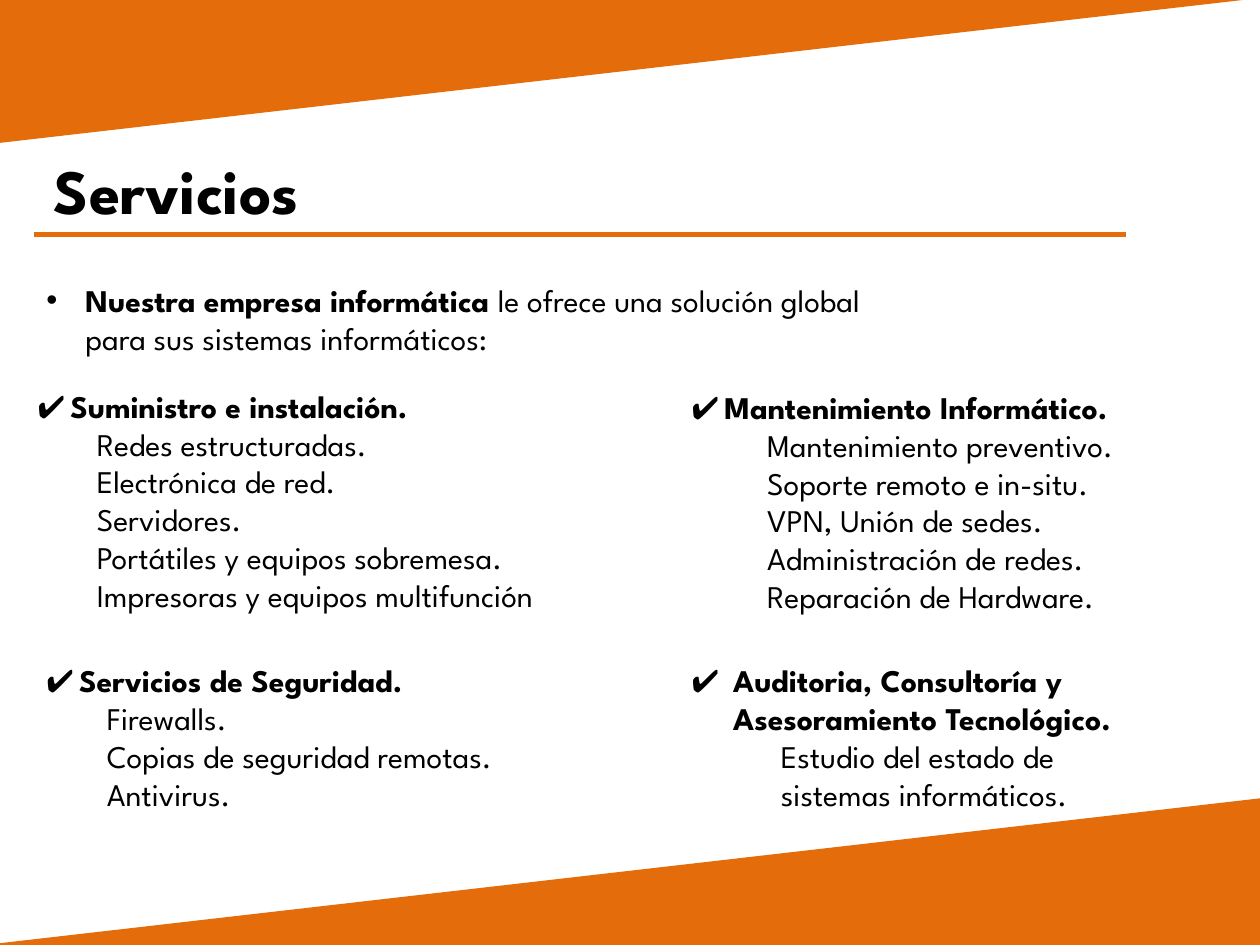
from dataclasses import dataclass

from lxml import etree
from pptx import Presentation
from pptx import util as u
from pptx.dml.color import RGBColor
from pptx.enum import shapes, text
from pptx.oxml.ns import qn

SLIDE_WIDTH, SLIDE_HEIGHT = u.Inches(10), u.Inches(7.5)
COLUMN, ROW = SLIDE_WIDTH / 100, SLIDE_HEIGHT / 100
ORANGE, BLACK = "E46C0A", "000000"
FONT = "League Spartan"
BAND_HEIGHT = 15.33


@dataclass
class Line:
    """Runs are (words, bold); indent and hang are in columns."""
    runs: list[tuple[str, bool]]
    indent: float = 0
    hang: float = 0
    bullet: str = ""
    size: float = 18


@dataclass
class Service:
    left: float
    top: float
    width: float
    height: float
    heading: list[str]
    items: list[str]
    item_indent: float
    heading_indent: float = 2.6

    def lines(self) -> list[Line]:
        first, *rest = self.heading
        return [
            Line([("✔\t", False), (first, True)], self.heading_indent, self.heading_indent),
            *(Line([(words, True)], self.heading_indent) for words in rest),
            *(Line([(words, False)], self.item_indent) for words in self.items),
        ]


SERVICES = [
    Service(2, 40.27, 67.7, 33.6, ["Suministro e instalación."],
            ["Redes estructuradas.", "Electrónica de red.", "Servidores.",
             "Portátiles y equipos sobremesa.", "Impresoras y equipos multifunción"], 4.7),
    Service(53.9, 40.4, 67.7, 25.6, ["Mantenimiento Informático."],
            ["Mantenimiento preventivo.", "Soporte remoto e in-situ.", "VPN, Unión de sedes.",
             "Administración de redes.", "Reparación de Hardware."], 6),
    Service(2.7, 69.33, 50, 21.6, ["Servicios de Seguridad."],
            ["Firewalls.", "Copias de seguridad remotas.", "Antivirus."], 4.8),
    Service(53.9, 69.33, 58, 17.47, ["Auditoria, Consultoría y", "Asesoramiento Tecnológico."],
            ["Estudio del estado de", "sistemas informáticos."], 7.1, 3.3),
]


def color(value: str) -> RGBColor:
    return RGBColor.from_string(value)


def place(left: float, top: float, width: float, height: float) -> list[int]:
    return [round(left * COLUMN), round(top * ROW), round(width * COLUMN), round(height * ROW)]


def set_format(target, values: dict) -> None:
    for name, value in values.items():
        setattr(target, name, value)


def add_text(slide, box: tuple, lines: list[Line]) -> None:
    frame = slide.shapes.add_textbox(*place(*box)).text_frame
    set_format(frame, {"word_wrap": True, "auto_size": text.MSO_AUTO_SIZE.NONE})
    for index, line in enumerate(lines):
        paragraph = frame.paragraphs[0] if index == 0 else frame.add_paragraph()
        properties = paragraph._p.get_or_add_pPr()
        properties.set("marL", str(round(line.indent * COLUMN)))
        properties.set("indent", str(round(-line.hang * COLUMN)))
        if line.bullet:
            etree.SubElement(properties, qn("a:buFont")).set("typeface", "Arial")
            etree.SubElement(properties, qn("a:buChar")).set("char", line.bullet)
        for words, bold in line.runs:
            run = paragraph.add_run()
            run.text = words
            set_format(run.font, {"name": FONT, "size": u.Pt(line.size), "bold": bold})
            run.font.color.rgb = color(BLACK)


def add_rule(slide, left: float, right: float, top: float) -> None:
    x_start, y, x_end, _ = place(left, top, right, 0)
    rule = slide.shapes.add_connector(shapes.MSO_CONNECTOR.STRAIGHT, x_start, y, x_end, y)
    rule.line.color.rgb = color(ORANGE)
    rule.line.width = u.Pt(3)
    etree.SubElement(rule._element.spPr, qn("a:effectLst"))


def add_band(slide, top: float, rotation: float) -> None:
    """Add a full-width wedge whose tip is at one end."""
    band = slide.shapes.add_shape(
        shapes.MSO_SHAPE.ISOSCELES_TRIANGLE, *place(0, top, 100, BAND_HEIGHT))
    band.adjustments[0] = 1
    band.rotation = rotation
    band.shadow.inherit = False
    band.fill.solid()
    band.fill.fore_color.rgb = color(ORANGE)
    band.line.color.rgb = color(ORANGE)
    band.line.width = u.Pt(2)


def main() -> None:
    presentation = Presentation()
    set_format(presentation, {"slide_width": SLIDE_WIDTH, "slide_height": SLIDE_HEIGHT})
    slide = presentation.slides.add_slide(presentation.slide_layouts[6])

    add_text(slide, (3.3, 15.33, 58.3, 9.47), [Line([("Servicios", True)], size=36)])
    add_rule(slide, 2.7, 89.4, 24.8)
    add_text(slide, (2.7, 29.07, 95.4, 9.47), [
        Line([("Nuestra empresa informática ", True), ("le ofrece una solución global", False)],
             3.1, 3.1, "•"),
        Line([("para sus sistemas informáticos:", False)], 3.1),
    ])
    for service in SERVICES:
        add_text(slide, (service.left, service.top, service.width, service.height),
                 service.lines())
    add_band(slide, 100 - BAND_HEIGHT, 0)
    add_band(slide, -0.4, 180)
    presentation.save("out.pptx")


if __name__ == "__main__":
    main()
